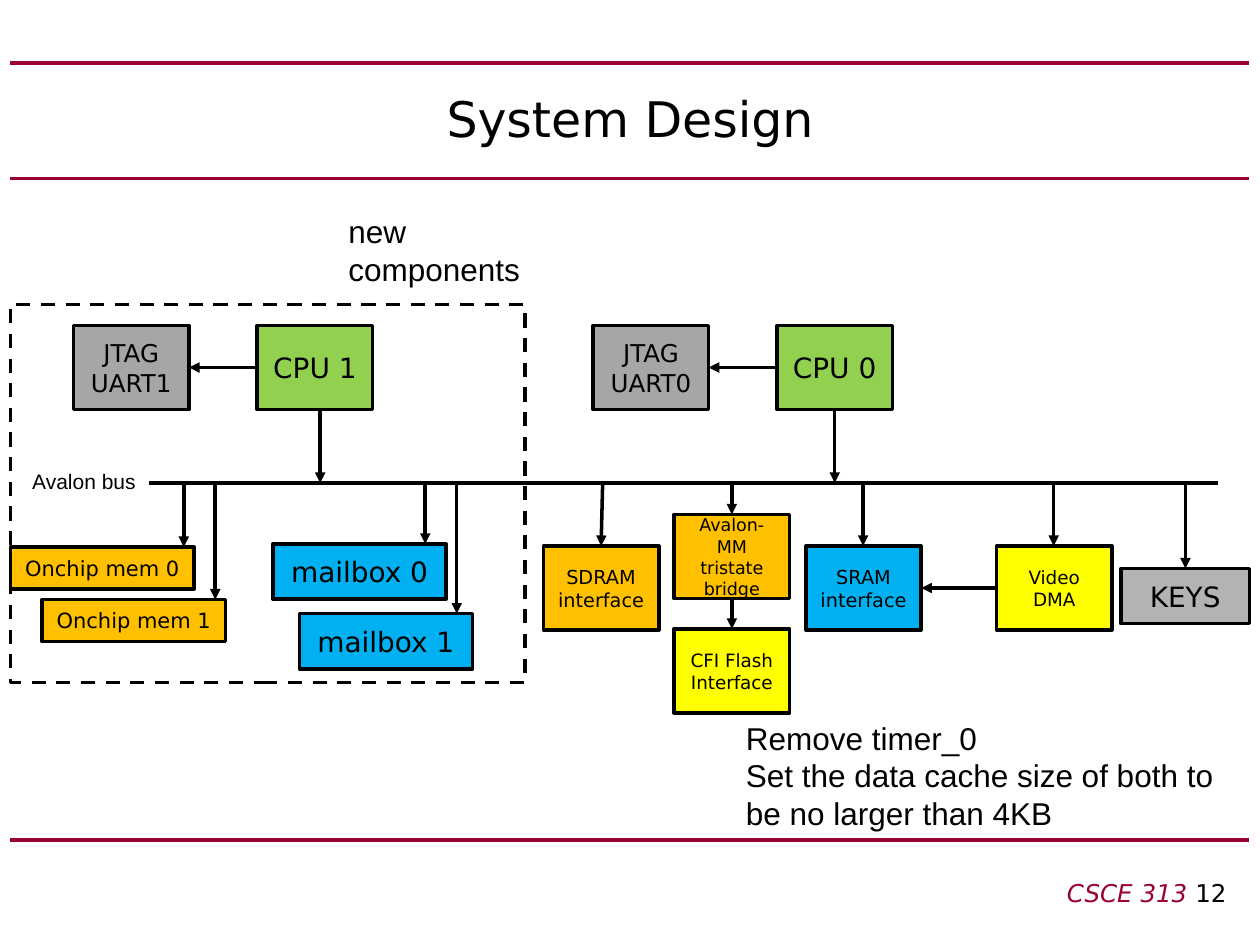
from collections import namedtuple
from dataclasses import dataclass

from pptx import Presentation
from pptx.dml.color import RGBColor
from pptx.enum.dml import MSO_LINE
from pptx.enum.shapes import MSO_CONNECTOR, MSO_SHAPE
from pptx.enum.text import MSO_ANCHOR as Anchor, MSO_AUTO_SIZE as AutoSize, PP_ALIGN as Align
from pptx.oxml.ns import qn
from pptx.util import Inches, Pt
from lxml.etree import SubElement

COLUMNS, ROWS = 120, 90          # grid of 1/12 inch cells
BUS_ROW = 46
BLOCK_WIDTH, BLOCK_HEIGHT = 11, 8

Run = namedtuple("Run", "text size font color italic", defaults=[False])


@dataclass
class Box:
    left: float
    top: float
    width: float
    height: float

    @property
    def right(self):
        return self.left + self.width

    @property
    def bottom(self):
        return self.top + self.height

    @property
    def middle(self):
        return self.top + self.height / 2


@dataclass(frozen=True)
class Theme:
    black: str = "000000"
    rule: str = "990033"
    cpu: str = "92D050"
    memory: str = "FFC000"
    shared: str = "00B0F0"
    device: str = "FFFF00"
    serial: str = "A6A6A6"
    keys: str = "B3B3B3"
    block_font: str = "DejaVu Sans"
    note_font: str = "Arial"
    title: float = 28
    note: float = 18
    large: float = 16
    medium: float = 14
    label: float = 12
    small: float = 11
    compact: float = 10.5
    tiny: float = 10
    line: float = 2
    rule_line: float = 2.25


class Diagram:
    """Holds the theme and the slide; all lengths are grid columns and rows."""

    def __init__(self, presentation, theme):
        self.theme = theme
        self.cell_width = presentation.slide_width / COLUMNS
        self.cell_height = presentation.slide_height / ROWS
        self.slide = presentation.slides.add_slide(presentation.slide_layouts[5])

    def x(self, columns):
        return round(columns * self.cell_width)

    def y(self, rows):
        return round(rows * self.cell_height)

    def frame(self, box):
        return self.x(box.left), self.y(box.top), self.x(box.width), self.y(box.height)

    def set_text(self, shape, paragraphs, align, anchor=Anchor.TOP):
        text_frame = shape.text_frame
        text_frame.word_wrap = True
        text_frame.vertical_anchor = anchor
        for index, runs in enumerate(paragraphs):
            paragraph = text_frame.add_paragraph() if index else text_frame.paragraphs[0]
            paragraph.alignment = align
            for item in runs:
                run = paragraph.add_run()
                run.text = item.text
                run.font.size = Pt(item.size)
                run.font.name = item.font
                run.font.italic = item.italic
                run.font.color.rgb = RGBColor.from_string(item.color)

    def title(self, text, box):
        shape = self.slide.shapes.title
        shape.left, shape.top, shape.width, shape.height = self.frame(box)
        run = Run(text, self.theme.title, self.theme.block_font, self.theme.black)
        self.set_text(shape, [[run]], Align.CENTER, Anchor.MIDDLE)

    def text(self, paragraphs, box, align=Align.LEFT, grow=False):
        shape = self.slide.shapes.add_textbox(*self.frame(box))
        self.set_text(shape, paragraphs, align)
        shape.text_frame.auto_size = AutoSize.SHAPE_TO_FIT_TEXT if grow else AutoSize.NONE

    def note(self, lines, size, box, align=Align.LEFT):
        runs = [[Run(line, size, self.theme.note_font, self.theme.black)] for line in lines]
        self.text(runs, box, align, grow=True)

    def rectangle(self, box):
        shape = self.slide.shapes.add_shape(MSO_SHAPE.RECTANGLE, *self.frame(box))
        shape.shadow.inherit = False
        shape.line.color.rgb = RGBColor.from_string(self.theme.black)
        shape.line.width = Pt(self.theme.line)
        return shape

    def block(self, text, size, fill, left, top, width=BLOCK_WIDTH, height=BLOCK_HEIGHT):
        box = Box(left, top, width, height)
        shape = self.rectangle(box)
        shape.fill.solid()
        shape.fill.fore_color.rgb = RGBColor.from_string(fill)
        run = Run(text, size, self.theme.block_font, self.theme.black)
        self.set_text(shape, [[run]], Align.CENTER, Anchor.MIDDLE)
        return box

    def outline(self, box):
        shape = self.rectangle(box)
        shape.fill.background()
        shape.line.dash_style = MSO_LINE.DASH

    def line(self, start, end, color, width, arrow=False):
        connector = self.slide.shapes.add_connector(
            MSO_CONNECTOR.STRAIGHT,
            self.x(start[0]), self.y(start[1]), self.x(end[0]), self.y(end[1]))
        connector.line.color.rgb = RGBColor.from_string(color)
        connector.line.width = Pt(width)
        properties = connector.element.spPr
        if arrow:
            SubElement(properties.find(qn("a:ln")), qn("a:tailEnd"), type="triangle")
        SubElement(properties, qn("a:effectLst"))

    def rule(self, row):
        self.line((1, row), (COLUMNS - 1, row), self.theme.rule, self.theme.rule_line)

    def arrow(self, start, end):
        self.line(start, end, self.theme.black, self.theme.line, arrow=True)

    def arrow_left(self, source, target):
        self.arrow((source.left, source.middle), (target.right, source.middle))

    def drop(self, column, target, start_row=BUS_ROW):
        self.arrow((column, start_row), (column, target.top))


def draw_processor(diagram, number, jtag_left, cpu_left, bus_column):
    theme = diagram.theme
    jtag = diagram.block(f"JTAG UART{number}", theme.medium, theme.serial, jtag_left, 31)
    cpu = diagram.block(f"CPU {number}", theme.large, theme.cpu, cpu_left, 31)
    diagram.arrow_left(cpu, jtag)
    diagram.arrow((bus_column, cpu.bottom), (bus_column, BUS_ROW))


def main():
    presentation = Presentation()
    presentation.slide_width, presentation.slide_height = Inches(10), Inches(7.5)
    theme = Theme()
    diagram = Diagram(presentation, theme)

    for row in (6, 17, 80):
        diagram.rule(row)
    diagram.title("System Design", Box(6, 6, 108, 10.4))
    diagram.text([[Run("CSCE 313 ", theme.medium, theme.block_font, theme.rule, True),
                   Run("12", theme.medium, theme.block_font, theme.black)]],
                 Box(45, 83, 73, 4), Align.RIGHT)

    diagram.line((14.15, BUS_ROW), (116, BUS_ROW), theme.black, theme.line)
    diagram.note(["Avalon bus"], theme.label, Box(0, 44, 16, 3.6), Align.CENTER)
    draw_processor(diagram, 1, 7, 24.5, 30.5)
    draw_processor(diagram, 0, 56.5, 74, 79.5)

    bridge = diagram.block("Avalon-MM tristate bridge", theme.tiny, theme.memory, 64.2, 49)
    flash = diagram.block("CFI Flash Interface", theme.compact, theme.device, 64.2, 59.9)
    sdram = diagram.block("SDRAM interface", theme.small, theme.memory, 51.75, 52)
    sram = diagram.block("SRAM interface", theme.small, theme.shared, 76.75, 52)
    video = diagram.block("Video DMA", theme.compact, theme.device, 94.9, 52)
    keys = diagram.block("KEYS", theme.large, theme.keys, 106.75, 54.15, 12.25, 5.25)
    for column, target in ((69.7, bridge), (82.2, sram), (100.35, video), (112.9, keys)):
        diagram.drop(column, target)
    diagram.arrow((57.4, BUS_ROW), (57.25, sdram.top))
    diagram.drop(69.7, flash, bridge.bottom)
    diagram.arrow_left(video, sram)

    for number in range(2):
        memory = diagram.block(f"Onchip mem {number}", theme.label, theme.memory,
                               1 + 3 * number, 52.1 + 5 * number, 17.5, 4)
        mailbox = diagram.block(f"mailbox {number}", theme.large, theme.shared,
                                26 + 2.5 * number, 51.8 + 6.65 * number, 16.5, 5.25)
        diagram.drop(17.5 + 3 * number, memory)
        diagram.drop(40.5 + 3 * number, mailbox)

    diagram.outline(Box(1, 29, 49, 36))
    diagram.note(["new components"], theme.note, Box(32, 19.6, 23, 8.5))
    diagram.note(["Remove timer_0",
                  "Set the data cache size of both to be no larger than 4KB"],
                 theme.note, Box(69.85, 67.85, 48.6, 12.1))

    presentation.save("out.pptx")


if __name__ == "__main__":
    main()
